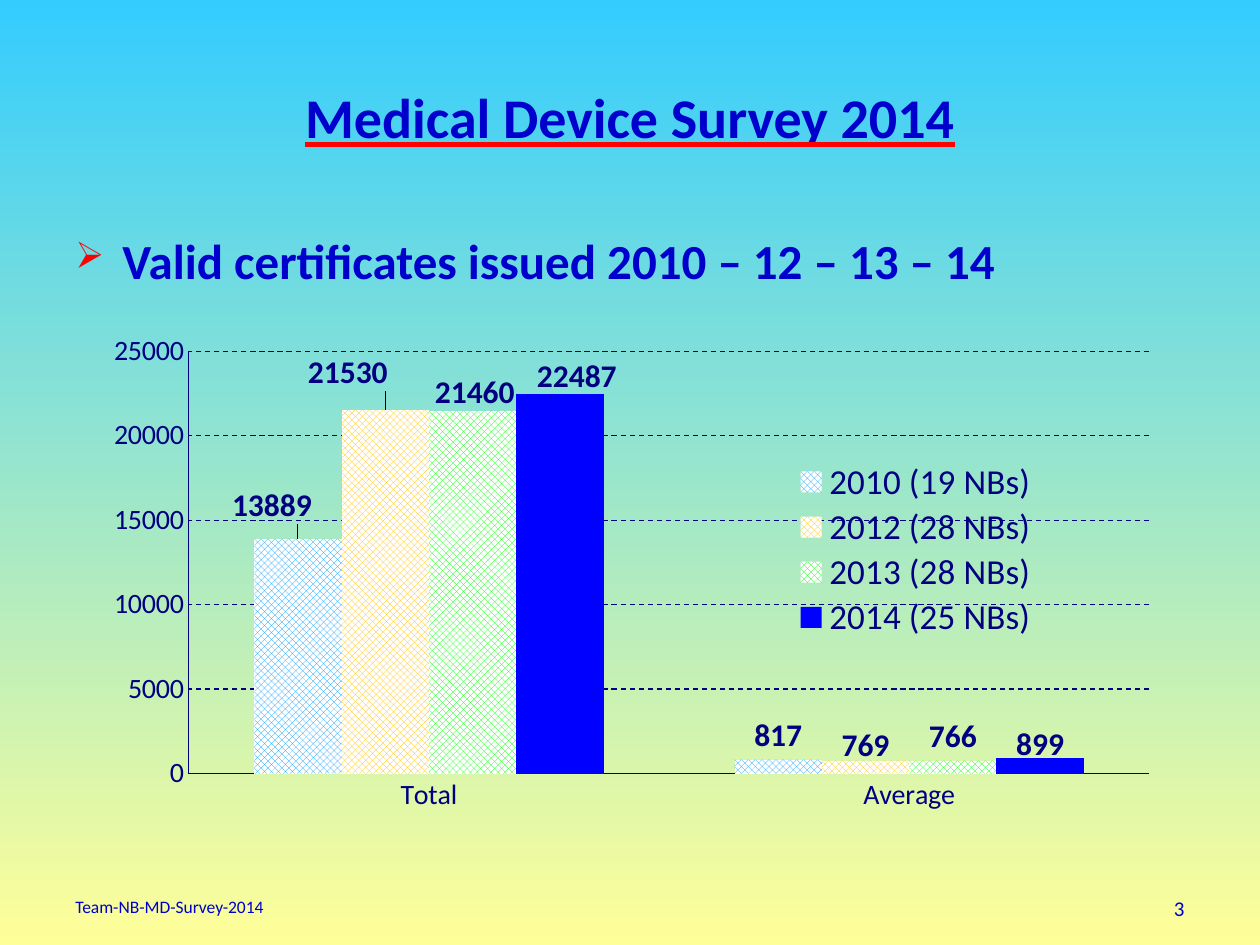
from dataclasses import dataclass, field

from lxml import etree
from pptx import Presentation
from pptx import util as u
from pptx.chart.data import CategoryChartData
from pptx.dml.color import RGBColor
from pptx.enum import chart as charts
from pptx.enum import dml, text
from pptx.oxml import parse_xml
from pptx.oxml.ns import nsdecls, qn


@dataclass(frozen=True)
class Theme:
    font: str = "Calibri"
    sky: str = "33CCFF"
    sand: str = "FFFF99"
    ink: str = "0000CC"
    chart_ink: str = "000080"
    accent: str = "FF0000"
    white: str = "FFFFFF"
    title_size: int = 32
    body_size: int = 28
    legend_size: int = 20
    label_size: int = 18
    axis_size: int = 16
    number_size: int = 12
    footer_size: int = 10


@dataclass(frozen=True)
class Box:
    left: float
    top: float
    width: float
    height: float

    def lengths(self) -> tuple:
        return tuple(u.Cm(n) for n in (self.left, self.top, self.width, self.height))


@dataclass(frozen=True)
class SurveyYear:
    name: str
    values: tuple
    color: str
    patterned: bool = True
    label_shifts: dict = field(default_factory=dict)


THEME = Theme()
TITLE_BOX = Box(1.27, 0.76, 22.86, 3.18)
BODY_BOX = Box(1.27, 4.52, 22.86, 2.08)
CHART_BOX = Box(1.27, 5.33, 22.86, 11.68)
FOOTER_BOX = Box(1.27, 17.93, 8.05, 0.74)
NUMBER_BOX = Box(18.21, 17.93, 5.92, 0.74)

CATEGORIES = ("Total", "Average")
YEARS = (
    SurveyYear("2010 (19 NBs)", (13889, 817), "0099FF",
               label_shifts={0: (-0.023, -0.016)}),
    SurveyYear("2012 (28 NBs)", (21530, 769), "FFC000",
               label_shifts={0: (-0.033, -0.024), 1: (0, 0.016)}),
    SurveyYear("2013 (28 NBs)", (21460, 766), "00FF00",
               label_shifts={0: (0.002, 0.01)}),
    SurveyYear("2014 (25 NBs)", (22487, 899), "0000FF", patterned=False,
               label_shifts={0: (0.015, 0.012), 1: (0, 0.017)}),
)


def rgb(color: str) -> RGBColor:
    return RGBColor.from_string(color)


def style_font(font, size: int, color: str, bold: bool = False) -> None:
    font.name = THEME.font
    font.size = u.Pt(size)
    font.bold = bold
    font.color.rgb = rgb(color)


def set_layout(parent, index: int, **values) -> None:
    for old in parent.findall(qn("c:layout")):
        parent.remove(old)
    entries = "".join(f'<c:{tag} val="{value}"/>' for tag, value in values.items())
    parent.insert(index, parse_xml(
        f'<c:layout {nsdecls("c")}><c:manualLayout>{entries}</c:manualLayout></c:layout>'))


def paint_background(slide) -> None:
    fill = slide.background.fill
    fill.gradient()
    fill.gradient_angle = 270
    for stop, color in zip(fill.gradient_stops, (THEME.sky, THEME.sand)):
        stop.color.rgb = rgb(color)


def add_title(slide, title: str) -> None:
    shape = slide.shapes.title
    shape.left, shape.top, shape.width, shape.height = TITLE_BOX.lengths()
    shape.text_frame.vertical_anchor = text.MSO_ANCHOR.MIDDLE
    paragraph = shape.text_frame.paragraphs[0]
    paragraph.alignment = text.PP_ALIGN.CENTER
    run = paragraph.add_run()
    run.text = title
    style_font(run.font, THEME.title_size, THEME.ink, True)
    run.font.underline = True
    underline = parse_xml(
        f'<a:uFill {nsdecls("a")}><a:solidFill><a:srgbClr val="{THEME.accent}"/>'
        '</a:solidFill></a:uFill>')
    run.font.fill
    paragraph_run = run._r.get_or_add_rPr()
    paragraph_run.find(qn("a:solidFill")).addnext(underline)


def add_text(slide, box: Box, content: str, size: int, bold: bool = False,
             alignment=text.PP_ALIGN.LEFT, bullet: str = "") -> None:
    frame = slide.shapes.add_textbox(*box.lengths()).text_frame
    frame.word_wrap = True
    paragraph = frame.paragraphs[0]
    paragraph.text = content
    paragraph.alignment = alignment
    if bullet:
        add_bullet(paragraph, bullet)
    style_font(paragraph.font, size, THEME.ink, bold)


def add_bullet(paragraph, character: str) -> None:
    properties = paragraph._p.get_or_add_pPr()
    indent = u.Cm(0.95)
    properties.set("marL", str(indent))
    properties.set("indent", str(-indent))
    color = etree.SubElement(properties, qn("a:buClr"))
    etree.SubElement(color, qn("a:srgbClr"), val=THEME.accent)
    etree.SubElement(properties, qn("a:buSzPct"), val="75000")
    etree.SubElement(properties, qn("a:buChar"), char=character)


def style_axes(chart) -> None:
    for axis in (chart.category_axis, chart.value_axis):
        axis.major_tick_mark = charts.XL_TICK_MARK.NONE
        axis.minor_tick_mark = charts.XL_TICK_MARK.NONE
        style_font(axis.tick_labels.font, THEME.axis_size, THEME.chart_ink)
        axis.format.line.color.rgb = rgb(THEME.chart_ink)
        axis.format.line.width = u.Pt(0.75)
    axis = chart.value_axis
    axis.minimum_scale, axis.maximum_scale, axis.major_unit = 0, 25000, 5000
    axis.has_major_gridlines = True
    grid = axis.major_gridlines.format.line
    grid.color.rgb = rgb(THEME.chart_ink)
    grid.width = u.Pt(0.75)
    grid.dash_style = dml.MSO_LINE.DASH


def style_series(series, element, year: SurveyYear) -> None:
    fill = series.format.fill
    if year.patterned:
        fill.patterned()
        fill.pattern = dml.MSO_PATTERN.LARGE_CHECKER_BOARD
        fill.fore_color.rgb = rgb(year.color)
        fill.back_color.rgb = rgb(THEME.white)
    else:
        fill.solid()
        fill.fore_color.rgb = rgb(year.color)
    labels = series.data_labels
    labels.show_value = True
    labels.position = charts.XL_LABEL_POSITION.OUTSIDE_END
    style_font(labels.font, THEME.label_size, THEME.chart_ink, True)
    for index, (x, y) in year.label_shifts.items():
        label = series.points[index].data_label
        style_font(label.font, THEME.label_size, THEME.chart_ink, True)
        label.position = charts.XL_LABEL_POSITION.OUTSIDE_END
        point = element.xpath(f'c:dLbls/c:dLbl[c:idx/@val="{index}"]')[0]
        set_layout(point, 1, x=x, y=y)


def add_survey_chart(slide) -> None:
    data = CategoryChartData()
    data.categories = CATEGORIES
    for year in YEARS:
        data.add_series(year.name, year.values)
    chart = slide.shapes.add_chart(
        charts.XL_CHART_TYPE.COLUMN_CLUSTERED, *CHART_BOX.lengths(), data).chart
    chart.has_title = False
    chart.has_legend = True
    chart.legend.position = charts.XL_LEGEND_POSITION.RIGHT
    chart.legend.include_in_layout = False
    style_font(chart.legend.font, THEME.legend_size, THEME.chart_ink)
    style_axes(chart)
    plot = chart.plots[0]
    plot.gap_width, plot.overlap = 150, 0
    plot.vary_by_categories = False
    for series, element, year in zip(plot.series, chart.element.xpath(".//c:ser"), YEARS):
        style_series(series, element, year)
    set_layout(chart.element.xpath(".//c:plotArea")[0], 0, layoutTarget="inner",
               xMode="edge", yMode="edge", x=0.111, y=0.15, w=0.847, h=0.729)
    set_layout(chart.element.xpath(".//c:legend")[0], 1,
               xMode="edge", yMode="edge", x=0.647, y=0.335, w=0.21, h=0.315)


def main() -> None:
    presentation = Presentation()
    presentation.slide_width, presentation.slide_height = u.Cm(25.4), u.Cm(19.05)
    slide = presentation.slides.add_slide(presentation.slide_layouts[5])
    paint_background(slide)
    add_title(slide, "Medical Device Survey 2014")
    add_text(slide, FOOTER_BOX, "Team-NB-MD-Survey-2014", THEME.footer_size)
    add_text(slide, NUMBER_BOX, "3", THEME.number_size, alignment=text.PP_ALIGN.RIGHT)
    add_text(slide, BODY_BOX, "Valid certificates issued 2010 – 12 – 13 – 14",
             THEME.body_size, bold=True, bullet="➢")
    add_survey_chart(slide)
    presentation.save("out.pptx")


if __name__ == "__main__":
    main()
